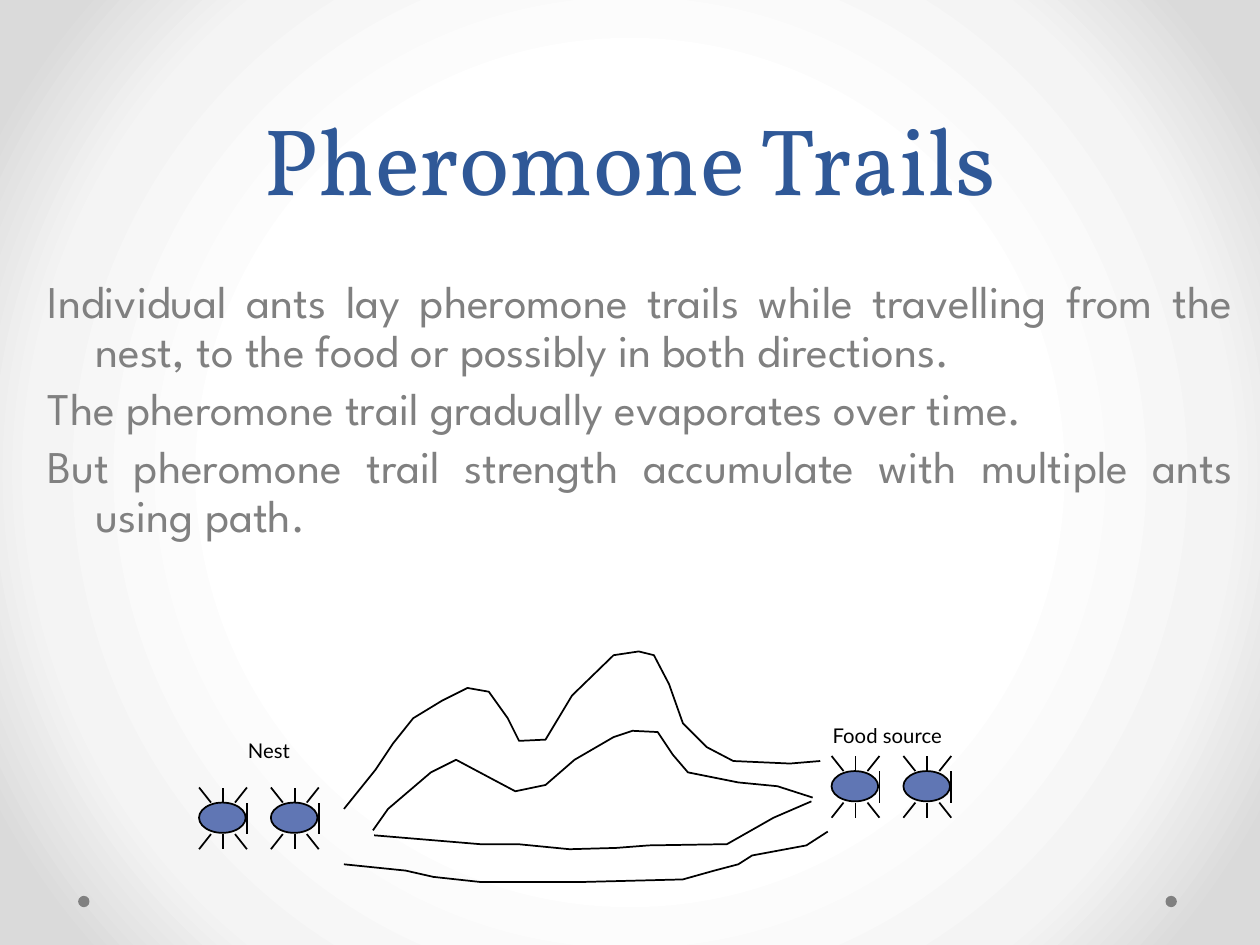
"""Build the slide on pheromone trails with its sketch of ants, nest and food."""
from lxml.etree import SubElement
from pptx import Presentation
from pptx.dml.color import RGBColor
from pptx.enum.shapes import MSO_CONNECTOR as Link, MSO_SHAPE as Shape
from pptx.enum.text import MSO_ANCHOR as Anchor, MSO_AUTO_SIZE as Fit, PP_ALIGN as Align
from pptx.oxml import parse_xml
from pptx.oxml.ns import nsdecls, qn
from pptx.util import Inches, Pt

BLUE = RGBColor(0x2F, 0x58, 0x97)
GREY = RGBColor(0x80, 0x80, 0x80)
ANT_BLUE = RGBColor(0x60, 0x76, 0xB4)
BLACK = RGBColor(0, 0, 0)
BACKDROP = [(50, "FFFFFF"), (76, "F4F4F4"), (92, "DADADA")]
UNIT = Inches(0.01)

TITLE = "Pheromone Trails"
FACTS = [
    "Individual ants lay pheromone trails while travelling from the nest, "
    "to the food or possibly in both directions.",
    "The pheromone trail gradually evaporates over time.",
    "But pheromone trail strength accumulate with multiple ants using path.",
]
LABELS = [("Food source", (651, 550, 133, 32), True), ("Nest", (187, 562, 56, 32), False)]
DOT_LEFTS, DOT_TOP, DOT_SIZE = (925, 62), 711, 9
COLONIES = [(158, 625), (660, 600)]
ANTS_PER_COLONY, ANT_STEP = 2, 57
ANT_WIDTH, ANT_HEIGHT, LEG_HEIGHT = 38, 25, 12
TRAILS = [
    [(273, 642), (298, 611), (312, 590), (328, 570), (351, 556), (371, 546), (388, 549),
     (403, 570), (412, 588), (433, 587), (454, 552), (487, 520), (507, 517), (519, 520),
     (531, 543), (542, 574), (561, 593), (582, 604), (627, 606), (651, 604)],
    [(296, 659), (308, 642), (342, 613), (362, 603), (392, 619), (409, 628), (433, 623),
     (456, 603), (487, 585), (502, 580), (522, 581), (534, 599), (546, 613), (586, 621),
     (617, 624), (645, 633)],
    [(297, 663), (381, 670), (411, 670), (452, 674), (489, 673), (515, 671), (577, 670),
     (614, 649), (644, 636)],
    [(273, 686), (322, 691), (344, 696), (381, 700), (463, 700), (542, 698), (567, 691),
     (586, 686), (597, 679), (640, 671), (657, 660)],
]


def scaled(numbers):
    return [round(UNIT * number) for number in numbers]


def place(holder, box):
    holder.left, holder.top, holder.width, holder.height = scaled(box)


def add_run(paragraph, text, font, size, color):
    run = paragraph.add_run()
    run.text = text
    run.font.name, run.font.size = font, Pt(size)
    run.font.color.rgb = color
    return run


def outline(item):
    item.line.color.rgb = BLACK
    item.line.width = Pt(1)


def add_oval(slide, box, color):
    oval = slide.shapes.add_shape(Shape.OVAL, *scaled(box))
    oval.shadow.inherit = False
    oval.fill.solid()
    oval.fill.fore_color.rgb = color
    oval.line.fill.background()
    return oval


def paint_backdrop(slide):
    stops = "".join(f'<a:gs pos="{share * 1000}"><a:srgbClr val="{color}"/></a:gs>'
                    for share, color in BACKDROP)
    slide.element.cSld.insert(0, parse_xml(
        f'<p:bg {nsdecls("p", "a")}><p:bgPr><a:gradFill rotWithShape="1">'
        f'<a:gsLst>{stops}</a:gsLst><a:path path="circle">'
        '<a:fillToRect l="50000" t="50000" r="50000" b="50000"/></a:path>'
        '</a:gradFill><a:effectLst/></p:bgPr></p:bg>'))


def write_title(title):
    place(title, (50, 0, 900, 175))
    title.text_frame.vertical_anchor = Anchor.BOTTOM
    title.text_frame.auto_size = Fit.NONE
    heading = title.text_frame.paragraphs[0]
    heading.alignment, heading.line_spacing = Align.CENTER, Pt(58)
    add_run(heading, TITLE, "Vollkorn", 54, BLUE)


def write_facts(body):
    place(body, (28, 217, 961, 283))
    frame = body.text_frame
    frame.auto_size = Fit.NONE
    for number, fact in enumerate(FACTS):
        paragraph = frame.add_paragraph() if number else frame.paragraphs[0]
        paragraph.alignment, paragraph.line_spacing = Align.JUSTIFY, 0.9
        indents = paragraph._p.get_or_add_pPr()
        indents.set("marL", str(Inches(0.38)))
        indents.set("indent", str(-Inches(0.38)))
        SubElement(indents, qn("a:buNone"))
        add_run(paragraph, fact, "League Spartan", 25.9, GREY)


def add_leg(slide, *ends):
    leg = slide.shapes.add_connector(Link.STRAIGHT, *scaled(ends))
    outline(leg)
    SubElement(leg._element.spPr, qn("a:effectLst"))


def draw_ant(slide, x, y):
    top, bottom = y + LEG_HEIGHT, y + LEG_HEIGHT + ANT_HEIGHT
    middle, right = x + ANT_WIDTH / 2, x + ANT_WIDTH
    outline(add_oval(slide, (x, top, ANT_WIDTH - 1, ANT_HEIGHT - 1), ANT_BLUE))
    for start, end in ((top, y), (bottom, bottom + LEG_HEIGHT)):
        for side in (-1, 0, 1):
            add_leg(slide, middle + side * ANT_WIDTH / 4, start,
                    middle + side * ANT_WIDTH / 2, end)
        add_leg(slide, right, (top + bottom) / 2, right, start)


def draw_trail(slide, points):
    builder = slide.shapes.build_freeform(*points[0], scale=UNIT)
    builder.add_line_segments(points[1:], close=False)
    trail = builder.convert_to_shape()
    trail.shadow.inherit = False
    trail.fill.background()
    outline(trail)


def write_label(slide, text, box, wrap):
    frame = slide.shapes.add_textbox(*scaled(box)).text_frame
    frame.word_wrap, frame.auto_size = wrap, Fit.SHAPE_TO_FIT_TEXT
    paragraph = frame.paragraphs[0]
    paragraph.space_before = Pt(4)
    run = add_run(paragraph, text, "Lato", 20, BLACK)
    run._r.get_or_add_rPr().set("baseline", "-25000")


def main():
    deck = Presentation()
    deck.slide_width, deck.slide_height = Inches(10), Inches(7.5)
    slide = deck.slides.add_slide(deck.slide_layouts[1])
    paint_backdrop(slide)
    write_title(slide.shapes.title)
    write_facts(slide.placeholders[1])
    for left in DOT_LEFTS:
        add_oval(slide, (left, DOT_TOP, DOT_SIZE, DOT_SIZE), GREY)
    for x, y in COLONIES:
        for number in range(ANTS_PER_COLONY):
            draw_ant(slide, x + number * ANT_STEP, y)
    for points in TRAILS:
        draw_trail(slide, points)
    for label in LABELS:
        write_label(slide, *label)
    deck.save("out.pptx")


if __name__ == "__main__":
    main()
